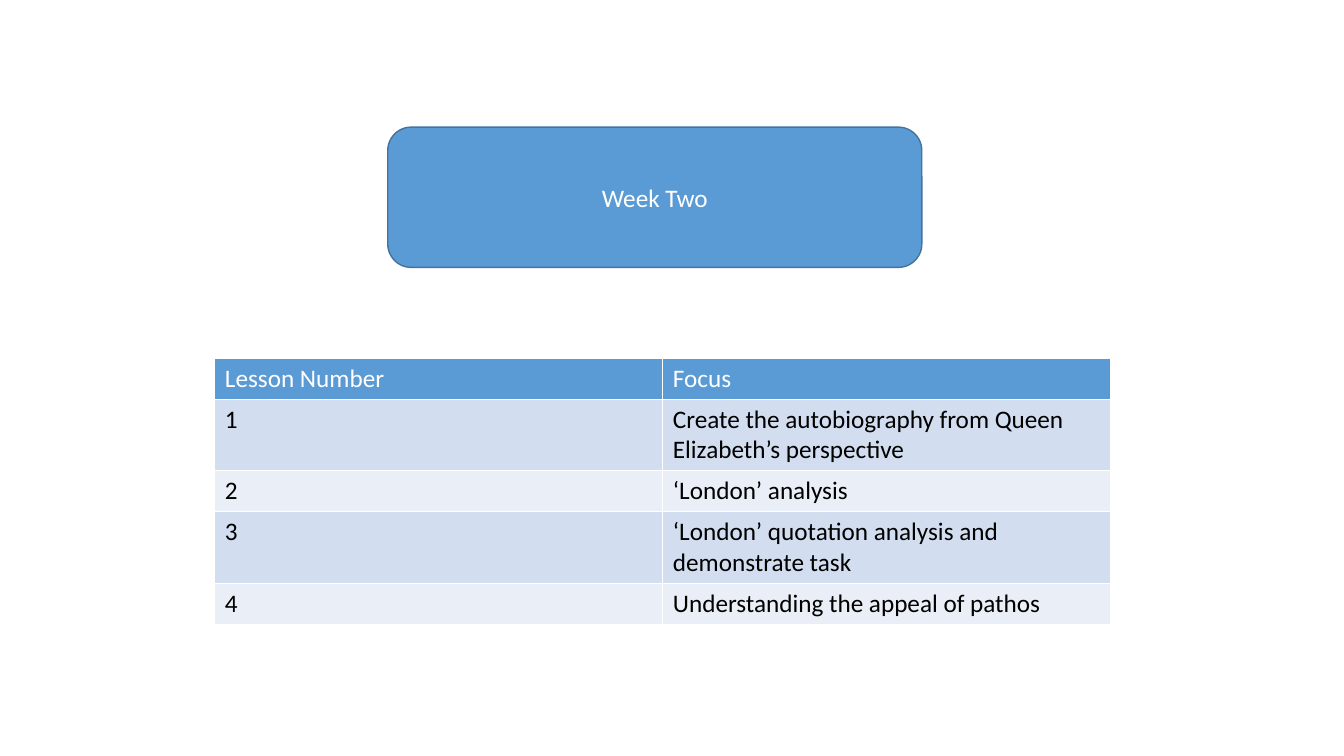
"""Build the Week Two lesson overview slide."""
from pptx import Presentation
from pptx.dml.color import RGBColor
from pptx.enum.shapes import MSO_SHAPE as Shape
from pptx.enum.text import MSO_ANCHOR as Anchor, PP_ALIGN as Align
from pptx.util import Pt

HEADING = "Week Two"
LESSONS = [
    ("Lesson Number", "Focus"),
    ("1", "Create the autobiography from Queen Elizabeth’s perspective"),
    ("2", "‘London’ analysis"),
    ("3", "‘London’ quotation analysis and demonstrate task"),
    ("4", "Understanding the appeal of pathos"),
]
ROW_HEIGHTS = [29.2, 51.1, 29.2, 51.1, 29.2]
COLUMN_WIDTH = 320
BLUE, OUTLINE, WHITE, BLACK = "5B9BD5", "43739E", "FFFFFF", "000000"
BANDS = ["EAEFF7", "D2DEEF"]


def paint(fill, color):
    fill.solid()
    fill.fore_color.rgb = RGBColor.from_string(color)


def write(text_frame, text, color):
    text_frame.text = text
    font = text_frame.paragraphs[0].runs[0].font
    font.name, font.size, font.bold = "Calibri", Pt(18), False
    paint(font.fill, color)


def add_heading(slide):
    shape = slide.shapes.add_shape(
        Shape.ROUNDED_RECTANGLE, Pt(277), Pt(90.8), Pt(381.5), Pt(100.2))
    shape.shadow.inherit = False
    paint(shape.fill, BLUE)
    paint(shape.line.fill, OUTLINE)
    shape.line.width = Pt(1)
    write(shape.text_frame, HEADING, WHITE)
    shape.text_frame.vertical_anchor = Anchor.MIDDLE
    shape.text_frame.paragraphs[0].alignment = Align.CENTER


def add_lessons(slide):
    columns = len(LESSONS[0])
    table = slide.shapes.add_table(
        len(LESSONS), columns, Pt(153.5), Pt(255.9),
        Pt(COLUMN_WIDTH * columns), Pt(sum(ROW_HEIGHTS))).table
    for row, (texts, height) in enumerate(zip(LESSONS, ROW_HEIGHTS)):
        table.rows[row].height = Pt(height)
        for column, text in enumerate(texts):
            cell = table.cell(row, column)
            paint(cell.fill, BANDS[row % 2] if row else BLUE)
            write(cell.text_frame, text, BLACK if row else WHITE)


def main():
    presentation = Presentation()
    presentation.slide_width, presentation.slide_height = Pt(960), Pt(540)
    slide = presentation.slides.add_slide(presentation.slide_layouts[6])
    add_lessons(slide)
    add_heading(slide)
    presentation.save("out.pptx")


if __name__ == "__main__":
    main()
